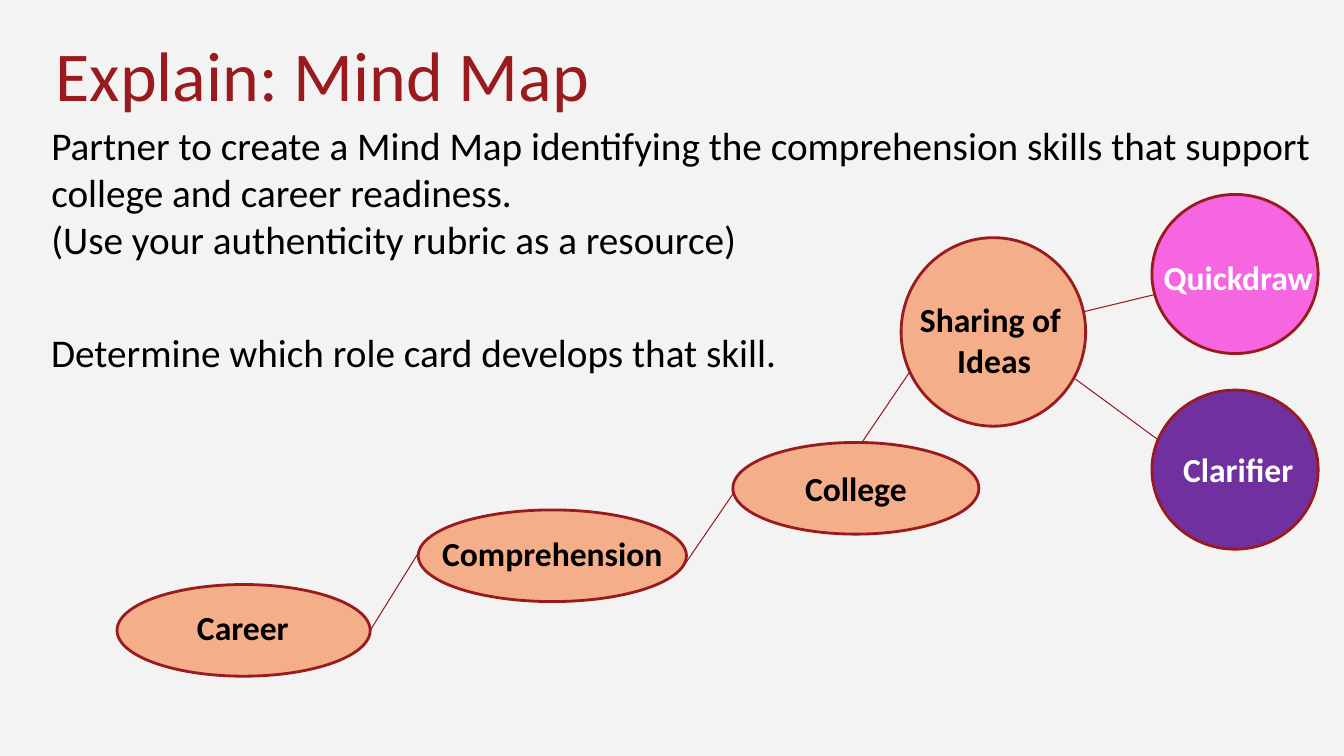
from dataclasses import dataclass
from typing import NamedTuple

from lxml.etree import SubElement
from pptx import Presentation
from pptx.dml.color import RGBColor
from pptx.enum.shapes import MSO_CONNECTOR, MSO_SHAPE
from pptx.enum.text import MSO_ANCHOR, MSO_AUTO_SIZE, PP_ALIGN
from pptx.oxml.ns import qn
from pptx.slide import Slide
from pptx.text.text import TextFrame, _Paragraph
from pptx.util import Cm, Pt


@dataclass(frozen=True)
class Theme:
    font: str = "Calibri"
    paper: str = "F3F3F3"
    accent: str = "991B1E"
    ink: str = "000000"
    light: str = "FFFFFF"
    peach: str = "F5AE8A"
    pink: str = "F566E0"
    purple: str = "7030A0"
    title_size: float = 50
    body_size: float = 28
    label_size: float = 24
    outline: float = 2
    link: float = 0.75


class Area(NamedTuple):
    left: float
    top: float
    width: float
    height: float

    def lengths(self) -> list[Cm]:
        return [Cm(value) for value in self]


class Link(NamedTuple):
    start_x: float
    start_y: float
    end_x: float
    end_y: float


@dataclass(frozen=True)
class Bubble:
    lines: tuple[str, ...]
    oval: Area
    label: Area
    fill: str
    ink: str
    wrap: bool = True


THEME = Theme()

BUBBLES = [
    Bubble(("Comprehension",), Area(10.54, 12.85, 6.76, 2.31),
           Area(10.54, 13.31, 6.76, 1.27), THEME.peach, THEME.ink),
    Bubble(("College",), Area(18.47, 11.15, 6.2, 2.31),
           Area(20.02, 11.66, 3.1, 1.27), THEME.peach, THEME.ink, wrap=False),
    Bubble(("Career",), Area(2.95, 14.73, 6.38, 2.31),
           Area(3.58, 15.16, 5.08, 1.27), THEME.peach, THEME.ink),
    Bubble(("Sharing of ", "Ideas"), Area(22.71, 5.99, 4.65, 4.75),
           Area(22.91, 7.42, 4.29, 2.31), THEME.peach, THEME.ink, wrap=False),
    Bubble(("Quickdraw",), Area(29.03, 4.9, 4.19, 4.01),
           Area(28.98, 6.35, 4.45, 1.27), THEME.pink, THEME.light),
    Bubble(("Clarifier",), Area(29.03, 9.83, 4.19, 4.01),
           Area(29.21, 11.18, 3.99, 1.27), THEME.purple, THEME.light),
]

LINKS = [
    Link(9.32, 15.9, 10.54, 13.94),
    Link(17.27, 14.2, 18.49, 12.42),
    Link(21.72, 11.15, 22.94, 9.35),
    Link(27.33, 7.85, 29.11, 7.42),
    Link(27.1, 9.55, 29.21, 11.1),
]


def color(value: str) -> RGBColor:
    return RGBColor.from_string(value)


def add_span(para: _Paragraph, text: str, size: float, ink: str, bold: bool = False) -> None:
    span = para.add_run()
    span.text = text
    span.font.name = THEME.font
    span.font.size = Pt(size)
    span.font.bold = bold
    span.font.color.rgb = color(ink)


def place(shape, area: Area) -> None:
    shape.left, shape.top, shape.width, shape.height = area.lengths()


def fill_title(page: Slide) -> None:
    title = page.shapes.title
    place(title, Area(1.4, 0.38, 16.1, 2.54))
    frame = title.text_frame
    frame.auto_size = MSO_AUTO_SIZE.NONE
    frame.vertical_anchor = MSO_ANCHOR.BOTTOM
    frame.margin_left = frame.margin_right = frame.margin_bottom = 0
    para = frame.paragraphs[0]
    para.alignment = PP_ALIGN.LEFT
    add_span(para, "Explain: Mind Map", THEME.title_size, THEME.accent)


def fill_body(page: Slide) -> None:
    body = page.placeholders[1]
    place(body, Area(1.04, 2.92, 32.39, 4.29))
    frame = body.text_frame
    frame.auto_size = MSO_AUTO_SIZE.NONE
    para = frame.paragraphs[0]
    properties = para._p.get_or_add_pPr()
    properties.set("marL", "0")
    properties.set("indent", "0")
    SubElement(properties, qn("a:buNone"))
    para.space_before = Pt(0)
    add_span(para, "Partner to create a Mind Map identifying the comprehension skills "
             "that support college and career readiness.", THEME.body_size, THEME.ink)
    para.add_line_break()
    add_span(para, "(Use your authenticity rubric as a resource)", THEME.body_size, THEME.ink)


def add_box(page: Slide, area: Area, wrap: bool) -> TextFrame:
    frame = page.shapes.add_textbox(*area.lengths()).text_frame
    frame.word_wrap = wrap
    frame.auto_size = MSO_AUTO_SIZE.SHAPE_TO_FIT_TEXT
    return frame


def add_bubble(page: Slide, bubble: Bubble) -> None:
    oval = page.shapes.add_shape(MSO_SHAPE.OVAL, *bubble.oval.lengths())
    oval.shadow.inherit = False
    oval.fill.solid()
    oval.fill.fore_color.rgb = color(bubble.fill)
    oval.line.color.rgb = color(THEME.accent)
    oval.line.width = Pt(THEME.outline)
    frame = add_box(page, bubble.label, bubble.wrap)
    for index, line in enumerate(bubble.lines):
        para = frame.add_paragraph() if index else frame.paragraphs[0]
        para.alignment = PP_ALIGN.CENTER
        add_span(para, line, THEME.label_size, bubble.ink, bold=True)


def add_link(page: Slide, link: Link) -> None:
    connector = page.shapes.add_connector(
        MSO_CONNECTOR.STRAIGHT, *[Cm(value) for value in link])
    connector.line.color.rgb = color(THEME.accent)
    connector.line.width = Pt(THEME.link)
    SubElement(connector._element.spPr, qn("a:effectLst"))


def main() -> None:
    deck = Presentation()
    deck.slide_width, deck.slide_height = Cm(33.87), Cm(19.05)
    page = deck.slides.add_slide(deck.slide_layouts[1])
    page.background.fill.solid()
    page.background.fill.fore_color.rgb = color(THEME.paper)
    fill_title(page)
    fill_body(page)
    for bubble in BUBBLES:
        add_bubble(page, bubble)
    for link in LINKS:
        add_link(page, link)
    question = add_box(page, Area(1.04, 8.15, 19.2, 1.45), wrap=False)
    add_span(question.paragraphs[0], "Determine which role card develops that skill.",
             THEME.body_size, THEME.ink)
    deck.save("out.pptx")


if __name__ == "__main__":
    main()
